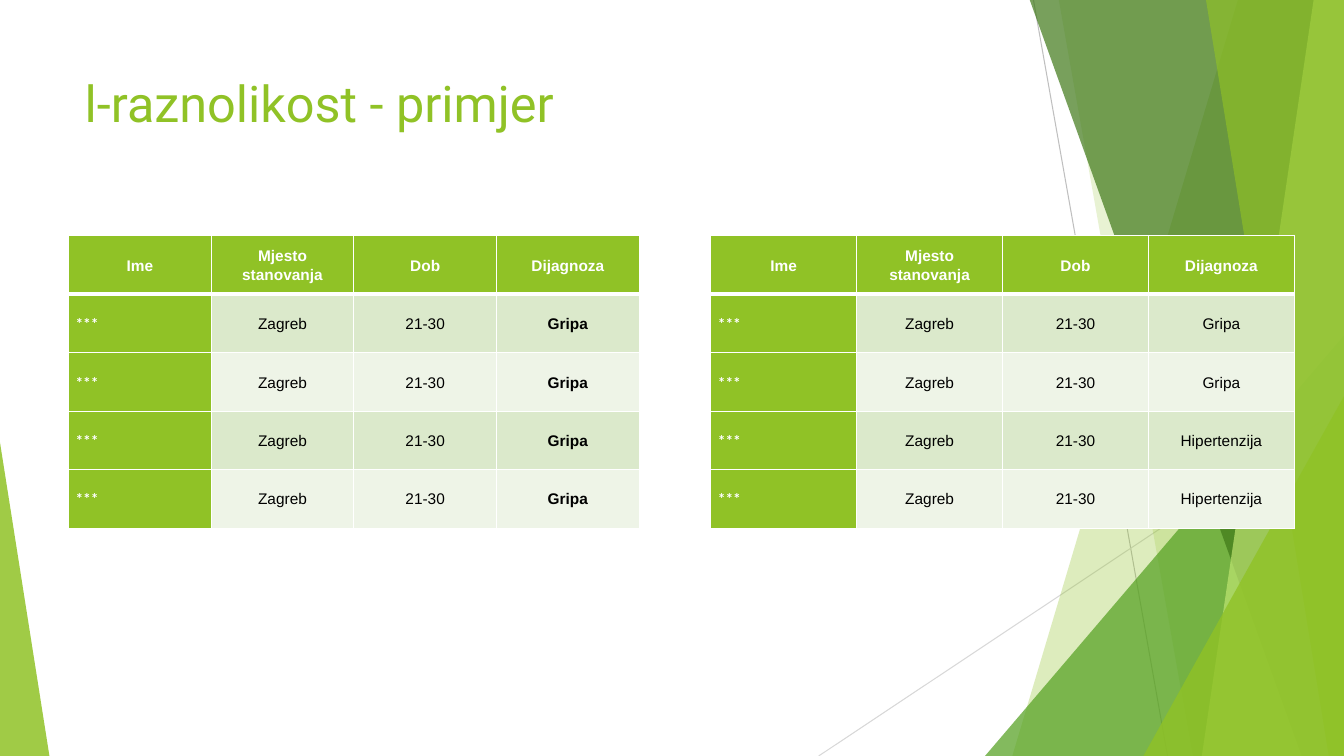
"""Build the l-diversity example slide with two tables on a faceted background."""
from dataclasses import dataclass

from lxml.etree import SubElement
from pptx import Presentation
from pptx.dml.color import RGBColor
from pptx.enum.shapes import MSO_CONNECTOR, MSO_SHAPE
from pptx.enum.text import MSO_ANCHOR, MSO_AUTO_SIZE, PP_ALIGN
from pptx.oxml import parse_xml
from pptx.oxml.ns import nsdecls, qn
from pptx.util import Inches, Pt

GREEN = RGBColor(0x90, 0xC2, 0x26)
MID_GREEN = RGBColor(0x54, 0xA0, 0x21)
DARK_GREEN = RGBColor(0x3F, 0x78, 0x18)
LIME = RGBColor(0xBF, 0xE4, 0x71)
BAND_DARK = RGBColor(0xDB, 0xE9, 0xCB)
BAND_LIGHT = RGBColor(0xEE, 0xF4, 0xE7)
GRAY = RGBColor(0xBF, 0xBF, 0xBF)
LIGHT_GRAY = RGBColor(0xD8, 0xD8, 0xD8)
WHITE = RGBColor(0xFF, 0xFF, 0xFF)
BLACK = RGBColor(0, 0, 0)

WIDTH, HEIGHT = 13.33, 7.5
FACET_TOP = -0.01
TABLE_TOP, ROW_HEIGHT = 2.34, 0.58
HEADERS = ("Ime", "Mjesto stanovanja", "Dob", "Dijagnoza")


@dataclass(frozen=True)
class Ray:
    start: tuple[float, float]
    end: tuple[float, float]
    color: RGBColor


@dataclass(frozen=True)
class Facet:
    top_left: float
    bottom_left: float
    color: RGBColor
    opacity: int


@dataclass(frozen=True)
class Corner:
    left: float
    top: float
    width: float
    apex: int
    color: RGBColor
    opacity: int


@dataclass(frozen=True)
class PatientTable:
    left: float
    column_width: float
    diagnoses: tuple[str, ...]
    bold_diagnosis: bool
    name_align: PP_ALIGN


@dataclass(frozen=True)
class CellStyle:
    fill: RGBColor
    color: RGBColor
    font: str = "Arial"
    bold: bool = False
    align: PP_ALIGN = PP_ALIGN.CENTER


BACKDROP = (
    Ray((10.25, 0), (11.58, HEIGHT), GRAY),
    Ray((WIDTH, 4.03), (8.12, HEIGHT), LIGHT_GRAY),
    Facet(12.28, 10.04, GREEN, 30),
    Facet(10.5, 11.83, GREEN, 20),
    Corner(9.77, 3.33, 3.56, 1, MID_GREEN, 72),
    Facet(10.21, 12.91, DARK_GREEN, 70),
    Facet(13.03, 11.92, LIME, 70),
    Facet(11.96, 13.18, GREEN, 65),
    Corner(11.34, 3.93, 1.99, 1, GREEN, 80),
    Corner(0, 4.39, 0.49, 0, GREEN, 85),
)
TABLES = (
    PatientTable(0.68, 1.415, ("Gripa",) * 4, True, PP_ALIGN.JUSTIFY),
    PatientTable(7.05, 1.447, ("Gripa",) * 2 + ("Hipertenzija",) * 2, False, PP_ALIGN.LEFT),
)


def set_all(target, values: dict) -> None:
    for name, value in values.items():
        setattr(target, name, value)


def paint(shape, color: RGBColor, opacity: int) -> None:
    shape.shadow.inherit = False
    shape.line.fill.background()
    shape.fill.solid()
    shape.fill.fore_color.rgb = color
    fill_color = shape.element.spPr.find(qn("a:solidFill"))[0]
    SubElement(fill_color, qn("a:alpha")).set("val", str(opacity * 1000))


def draw_ray(page, ray: Ray) -> None:
    points = [Inches(value) for value in (*ray.start, *ray.end)]
    line = page.shapes.add_connector(MSO_CONNECTOR.STRAIGHT, *points)
    line.line.color.rgb = ray.color
    line.line.width = Pt(0.75)
    SubElement(line.element.spPr, qn("a:effectLst"))


def draw_facet(page, facet: Facet) -> None:
    outline = [(facet.top_left, FACET_TOP), (WIDTH, FACET_TOP),
               (WIDTH, HEIGHT), (facet.bottom_left, HEIGHT)]
    start, *rest = [(Inches(x), Inches(y)) for x, y in outline]
    builder = page.shapes.build_freeform(*start)
    builder.add_line_segments(rest, close=True)
    paint(builder.convert_to_shape(), facet.color, facet.opacity)


def draw_corner(page, corner: Corner) -> None:
    box = (corner.left, corner.top, corner.width, HEIGHT - corner.top)
    shape = page.shapes.add_shape(MSO_SHAPE.ISOSCELES_TRIANGLE, *map(Inches, box))
    shape.adjustments[0] = corner.apex
    paint(shape, corner.color, corner.opacity)


def write(para, text: str, size: float, font: str, color: RGBColor, bold: bool) -> None:
    span = para.add_run()
    span.text = text
    set_all(span.font, {"size": Pt(size), "name": font, "bold": bold})
    span.font.color.rgb = color


def draw_title(page) -> None:
    title = page.shapes.title
    title.element.getparent().append(title.element)
    set_all(title, {"left": Inches(0.74), "top": Inches(0.67),
                    "width": Inches(9.4), "height": Inches(1.44)})
    frame = title.text_frame
    set_all(frame, {"vertical_anchor": MSO_ANCHOR.TOP, "word_wrap": True,
                    "auto_size": MSO_AUTO_SIZE.NONE})
    para = frame.paragraphs[0]
    para.alignment = PP_ALIGN.LEFT
    write(para, "l-raznolikost - primjer", 36, "Roboto", GREEN, False)


def set_borders(cell, row: int) -> None:
    widths = {"L": 1, "R": 1, "T": 3 if row == 1 else 1, "B": 3 if row == 0 else 1}
    properties = cell._tc.get_or_add_tcPr()
    for index, (side, width) in enumerate(widths.items()):
        properties.insert(index, parse_xml(
            f'<a:ln{side} {nsdecls("a")} w="{Pt(width)}"><a:solidFill>'
            f'<a:srgbClr val="{WHITE}"/></a:solidFill></a:ln{side}>'))


def cell_style(table: PatientTable, row: int, column: int) -> CellStyle:
    if row == 0:
        return CellStyle(GREEN, WHITE, bold=True)
    if column == 0:
        return CellStyle(GREEN, WHITE, "Calibri", True, table.name_align)
    band = BAND_DARK if row % 2 else BAND_LIGHT
    return CellStyle(band, BLACK, bold=column == 3 and table.bold_diagnosis)


def draw_table(page, table: PatientTable) -> None:
    rows = [HEADERS] + [("***", "Zagreb", "21-30", name) for name in table.diagnoses]
    box = (table.left, TABLE_TOP, table.column_width * len(HEADERS), ROW_HEIGHT * len(rows))
    grid = page.shapes.add_table(len(rows), len(HEADERS), *map(Inches, box)).table
    for row, texts in enumerate(rows):
        for column, text in enumerate(texts):
            cell, style = grid.cell(row, column), cell_style(table, row, column)
            set_all(cell, {"margin_left": Inches(0.07), "margin_right": Inches(0.07),
                           "margin_top": 0, "margin_bottom": 0,
                           "vertical_anchor": MSO_ANCHOR.MIDDLE})
            cell.fill.solid()
            cell.fill.fore_color.rgb = style.fill
            set_borders(cell, row)
            para = cell.text_frame.paragraphs[0]
            set_all(para, {"alignment": style.align, "line_spacing": 1.07})
            write(para, text, 11, style.font, style.color, style.bold)


def main() -> None:
    deck = Presentation()
    set_all(deck, {"slide_width": Inches(WIDTH), "slide_height": Inches(HEIGHT)})
    page = deck.slides.add_slide(deck.slide_layouts[5])
    painters = {Ray: draw_ray, Facet: draw_facet, Corner: draw_corner}
    for item in BACKDROP:
        painters[type(item)](page, item)
    draw_title(page)
    for table in TABLES:
        draw_table(page, table)
    deck.save("out.pptx")


if __name__ == "__main__":
    main()
